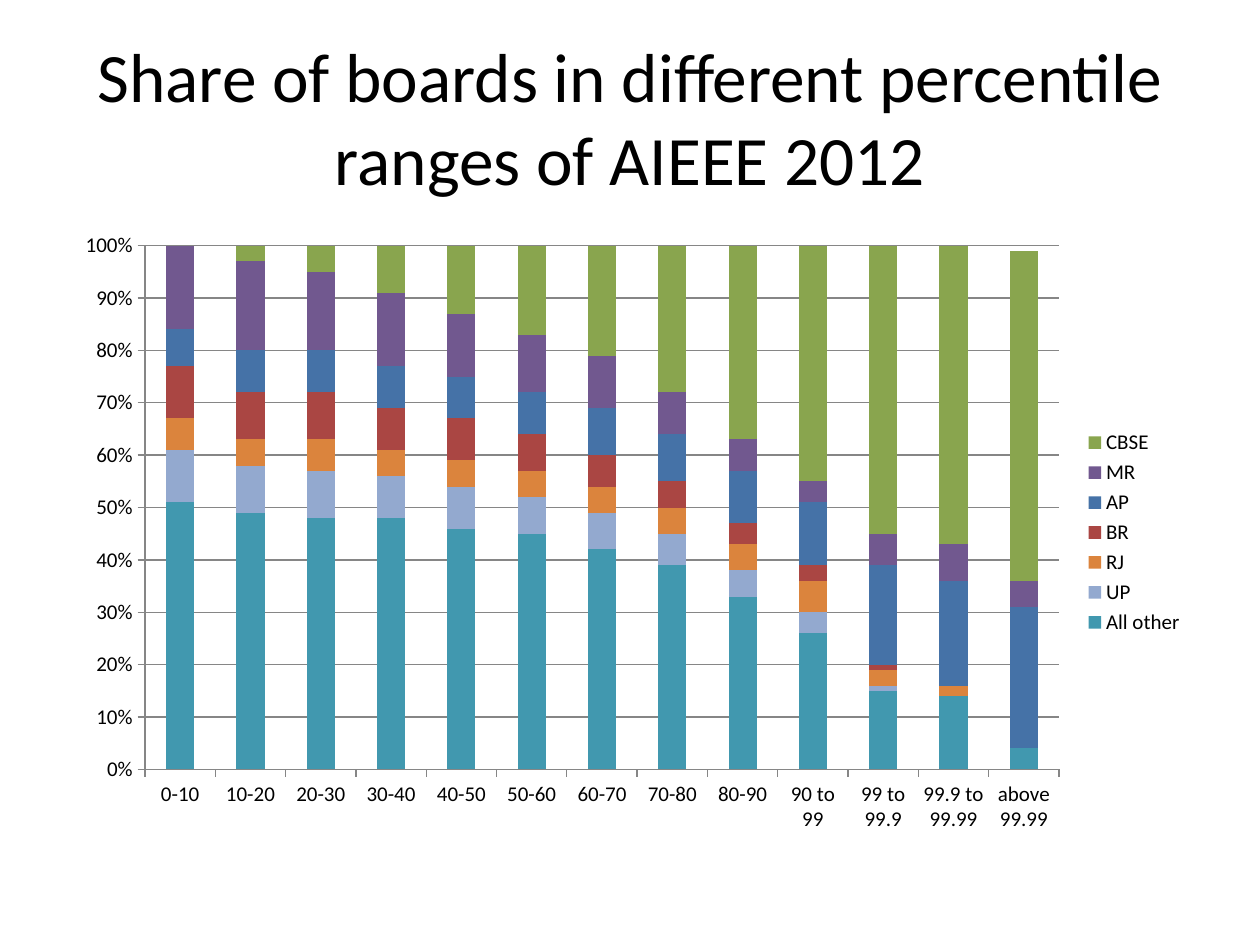
from dataclasses import dataclass

from pptx import Presentation
from pptx.chart.axis import _BaseAxis as Axis
from pptx.chart.chart import Chart
from pptx.chart.data import CategoryChartData
from pptx.dml.color import RGBColor
from pptx.enum.chart import XL_CHART_TYPE as ChartType
from pptx.enum.chart import XL_LEGEND_POSITION as LegendPosition
from pptx.enum.chart import XL_TICK_MARK as TickMark
from pptx.enum.text import MSO_ANCHOR as Anchor
from pptx.enum.text import PP_ALIGN as Align
from pptx.slide import Slide
from pptx.text.text import Font
from pptx.util import Cm, Pt


@dataclass(frozen=True)
class Theme:
    font: str = "Calibri"
    title_size: float = 39.6
    chart_size: float = 12
    text: str = "000000"
    line: str = "868686"
    teal: str = "4198AF"
    light_blue: str = "93A9CF"
    orange: str = "DB843D"
    red: str = "AA4643"
    blue: str = "4572A7"
    purple: str = "71588F"
    green: str = "89A54E"


@dataclass(frozen=True)
class Board:
    name: str
    color: str
    shares: tuple[float, ...]


THEME = Theme()
PERCENTILES = (
    "0-10", "10-20", "20-30", "30-40", "40-50", "50-60", "60-70", "70-80", "80-90",
    "90 to 99", "99 to 99.9", "99.9 to 99.99", "above 99.99",
)
BOARDS = (
    Board("All other", THEME.teal,
          (0.51, 0.49, 0.48, 0.48, 0.46, 0.45, 0.42, 0.39, 0.33, 0.26, 0.15, 0.14, 0.04)),
    Board("UP", THEME.light_blue,
          (0.1, 0.09, 0.09, 0.08, 0.08, 0.07, 0.07, 0.06, 0.05, 0.04, 0.01, 0, 0)),
    Board("RJ", THEME.orange,
          (0.06, 0.05, 0.06, 0.05, 0.05, 0.05, 0.05, 0.05, 0.05, 0.06, 0.03, 0.02, 0)),
    Board("BR", THEME.red,
          (0.1, 0.09, 0.09, 0.08, 0.08, 0.07, 0.06, 0.05, 0.04, 0.03, 0.01, 0, 0)),
    Board("AP", THEME.blue,
          (0.07, 0.08, 0.08, 0.08, 0.08, 0.08, 0.09, 0.09, 0.1, 0.12, 0.19, 0.2, 0.27)),
    Board("MR", THEME.purple,
          (0.18, 0.17, 0.15, 0.14, 0.12, 0.11, 0.1, 0.08, 0.06, 0.04, 0.06, 0.07, 0.05)),
    Board("CBSE", THEME.green,
          (0.14, 0.17, 0.2, 0.22, 0.26, 0.28, 0.33, 0.39, 0.46, 0.54, 0.6, 0.59, 0.63)),
)


def style_font(font: Font, size: float) -> None:
    """Apply the theme's typeface and text colour at the given size."""
    font.name = THEME.font
    font.size = Pt(size)
    font.color.rgb = RGBColor.from_string(THEME.text)


def add_title(slide: Slide, text: str) -> None:
    """Fill and place the title placeholder."""
    title = slide.shapes.title
    title.left, title.top, title.width, title.height = Cm(1.27), Cm(0.76), Cm(22.86), Cm(3.18)
    frame = title.text_frame
    frame.text = text
    frame.word_wrap = True
    frame.vertical_anchor = Anchor.MIDDLE
    paragraph = frame.paragraphs[0]
    paragraph.alignment = Align.CENTER
    style_font(paragraph.font, THEME.title_size)


def style_axis(axis: Axis) -> None:
    """Give an axis a thin grey line with outside ticks."""
    axis.major_tick_mark = TickMark.OUTSIDE
    axis.minor_tick_mark = TickMark.NONE
    axis.format.line.color.rgb = RGBColor.from_string(THEME.line)
    axis.format.line.width = Pt(0.75)


def style_value_axis(chart: Chart) -> None:
    """Scale the value axis from 0 to 100 % with gridlines."""
    axis = chart.value_axis
    axis.minimum_scale, axis.maximum_scale, axis.major_unit = 0, 1, 0.1
    axis.tick_labels.number_format = "0%"
    axis.tick_labels.number_format_is_linked = False
    axis.has_major_gridlines = True
    gridline = axis.major_gridlines.format.line
    gridline.color.rgb = RGBColor.from_string(THEME.line)
    gridline.width = Pt(0.75)


def add_share_chart(slide: Slide, boards: tuple[Board, ...]) -> None:
    """Add the stacked columns of board shares by percentile range."""
    data = CategoryChartData(number_format="0%")
    data.categories = PERCENTILES
    for board in boards:
        data.add_series(board.name, board.shares)
    chart = slide.shapes.add_chart(
        ChartType.COLUMN_STACKED, Cm(1.27), Cm(4.45), Cm(22.86), Cm(12.57), data
    ).chart
    style_font(chart.font, THEME.chart_size)
    chart.has_title = False
    chart.has_legend = True
    chart.legend.position = LegendPosition.RIGHT
    chart.legend.include_in_layout = False
    for axis in (chart.category_axis, chart.value_axis):
        style_axis(axis)
    style_value_axis(chart)
    plot = chart.plots[0]
    plot.gap_width, plot.overlap, plot.vary_by_categories = 150, 100, False
    for series, board in zip(plot.series, boards):
        series.format.fill.solid()
        series.format.fill.fore_color.rgb = RGBColor.from_string(board.color)


def main() -> None:
    """Build and save the presentation."""
    presentation = Presentation()
    presentation.slide_width, presentation.slide_height = Cm(25.4), Cm(19.05)
    slide = presentation.slides.add_slide(presentation.slide_layouts.get_by_name("Title Only"))
    add_title(slide, "Share of boards in different percentile ranges of AIEEE 2012")
    add_share_chart(slide, BOARDS)
    presentation.save("out.pptx")


if __name__ == "__main__":
    main()
